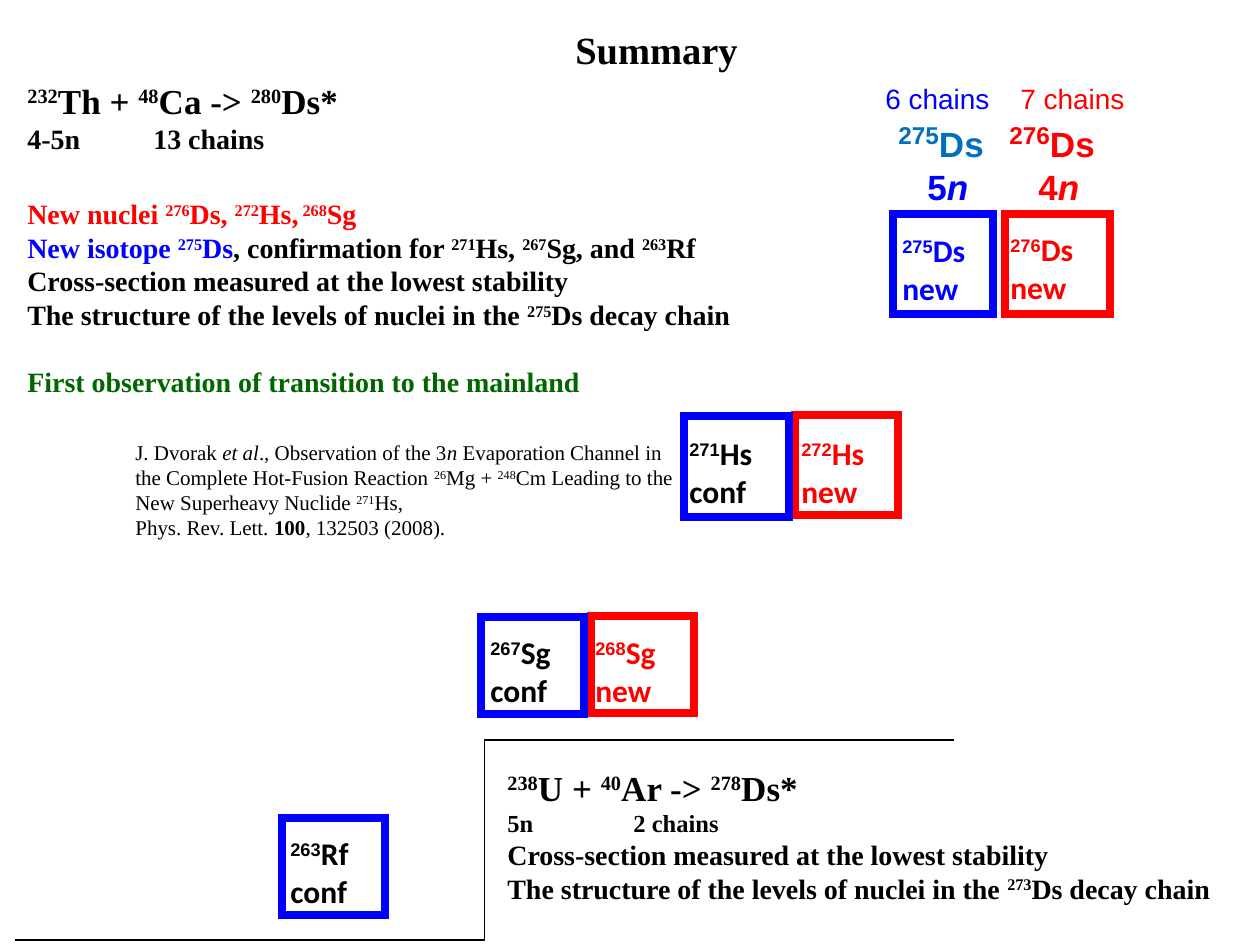
from lxml.etree import SubElement
from pptx import Presentation
from pptx.dml.color import RGBColor
from pptx.enum.shapes import MSO_CONNECTOR as Link, MSO_SHAPE as Shape
from pptx.enum.text import MSO_AUTO_SIZE as Fit
from pptx.oxml.ns import qn
from pptx.util import Pt

PX = 914400 / 126
RED, BLUE, SKY, GREEN, BLACK = "FF0000", "0000FF", "0070C0", "006600", "000000"
SERIF, SANS, CELL = "Times New Roman", "Arial", "Calibri"
TAB = 126

# Marks in text: ^ superscript, _ italic, ~ bold, | back to black
# Line: text, size, colour, space before in points
LEVELS = "The structure of the levels of nuclei in the "
CROSS = "Cross-section measured at the lowest stability"
THORIUM = [
    ("^232^Th + ^48^Ca -> ^280^Ds*", 20, BLACK, 0),
    ("4-5n\t13 chains", 16, BLACK, 0),
    ("New nuclei ^276^Ds, ^272^Hs,^ 268^Sg", 16, RED, 24),
    ("New isotope ^275^Ds|, confirmation for ^271^Hs, ^267^Sg, and ^263^Rf",
     16, BLUE, 0),
    (CROSS, 16, BLACK, 0),
    (LEVELS + "^275^Ds decay chain", 16, BLACK, 0),
    ("First observation of transition to the mainland", 16, GREEN, 19),
]
URANIUM = [
    ("^238^U + ^40^Ar -> ^278^Ds*", 20, BLACK, 0),
    ("5n\t2 chains", 14, BLACK, 0),
    (CROSS, 16, BLACK, 0),
    (LEVELS + "^273^Ds decay chain", 16, BLACK, 0),
]
PAPER = [
    ("J. Dvorak _et al_., Observation of the 3_n_ Evaporation Channel in the "
     "Complete Hot-Fusion Reaction ^26^Mg + ^248^Cm Leading to the "
     "New Superheavy Nuclide ^271^Hs,", 12, BLACK, 0),
    ("Phys. Rev. Lett. ~100~, 132503 (2008).", 12, BLACK, 0),
]

# Box, lines, font, bold, wrap
BLOCKS = [
    ((15, 73, 774, 331), THORIUM, SERIF, True, True),
    ((123, 433, 564, 113), PAPER, SERIF, False, True),
    ((873, 75, 130, 45), [("6 chains", 16, BLUE, 0)], SANS, False, False),
    ((1008, 75, 184, 45), [("7 chains", 16, RED, 0)], SANS, False, True),
    ((563, 20, 194, 58), [("Summary", 22, BLACK, 0)], SERIF, True, True),
    ((495, 760, 750, 151), URANIUM, SERIF, True, True),
]

# Column heads: box, mass, mass colour, neutrons, their colour, wrap
HEADS = [
    ((997, 109, 164, 105), "276", RED, "4", RED, True),
    ((886, 109, 111, 105), "275", SKY, "5", BLUE, False),
]

# Nuclides: frame, text corner, mass, element, state, frame and text colour
CELLS = [
    ((1005, 214, 105, 100), (998, 224), "276", "Ds", "new", RED, RED),
    ((795, 415, 103, 100), (789, 428), "272", "Hs", "new", RED, RED),
    ((591, 616, 103, 97), (583, 627), "268", "Sg", "new", RED, RED),
    ((893, 214, 100, 100), (890, 225), "275", "Ds", "new", BLUE, BLUE),
    ((684, 416, 105, 101), (677, 428), "271", "Hs", "conf", BLUE, BLACK),
    ((481, 617, 103, 97), (478, 627), "267", "Sg", "conf", BLUE, BLACK),
    ((282, 818, 103, 97), (278, 828), "263", "Rf", "conf", BLUE, BLACK),
]


def px(*vals):
    return [round(v * PX) for v in vals]


def rgb(code):
    return RGBColor.from_string(code)


def add_runs(para, text, bold, sup_font, sup_size):
    on = {"^": False, "_": False, "~": False, "|": False}

    def flush(part):
        if not part:
            return
        run = para.add_run()
        run.text = part
        if on["^"]:
            run._r.get_or_add_rPr().set("baseline", "30000")
            if sup_font:
                run.font.name = sup_font
            if sup_size:
                run.font.size = Pt(sup_size)
        if on["_"]:
            run.font.italic = True
        if on["~"]:
            run.font.bold = not bold
        if on["|"]:
            run.font.color.rgb = rgb(BLACK)

    part = ""
    for char in text:
        if char in on:
            flush(part)
            part = ""
            on[char] = not on[char]
        else:
            part += char
    flush(part)


def add_text(box, lines, font, bold, wrap, sup_font=None, sup_size=None):
    frame = slide.shapes.add_textbox(*px(*box)).text_frame
    frame.word_wrap = wrap
    frame.auto_size = Fit.SHAPE_TO_FIT_TEXT
    for i, (text, size, color, gap) in enumerate(lines):
        para = frame.paragraphs[0] if i == 0 else frame.add_paragraph()
        if gap:
            para.space_before = Pt(gap)
        if "\t" in text:
            tabs = SubElement(para._p.get_or_add_pPr(), qn("a:tabLst"))
            SubElement(tabs, qn("a:tab"), pos=str(px(TAB)[0]), algn="l")
        para.font.name, para.font.size = font, Pt(size)
        para.font.bold, para.font.color.rgb = bold, rgb(color)
        add_runs(para, text, bold, sup_font, sup_size)
    return frame


deck = Presentation()
deck.slide_width, deck.slide_height = px(1260, 945)
slide = deck.slides.add_slide(deck.slide_layouts[6])

# Nuclide frames with their labels, sharp corners
for box, (x, y), mass, name, state, edge, ink in CELLS:
    rect = slide.shapes.add_shape(Shape.RECTANGLE, *px(*box))
    rect.shadow.inherit = False
    rect.fill.background()
    rect.line.color.rgb, rect.line.width = rgb(edge), Pt(4.5)
    SubElement(rect.line._get_or_add_ln(), qn("a:miter"), lim="800000")
    lines = [(f"^{mass}^{name}", 18, ink, 0), (state, 18, ink, 0)]
    add_text((x, y, 100, 88), lines, CELL, True, False, SANS)

# Column heads, neutron count indented
for box, mass, tint, count, ink, wrap in HEADS:
    lines = [(f"^{mass}^Ds", 20, tint, 0), (f"{count}_n_", 20, ink, 0)]
    frame = add_text(box, lines, SANS, True, wrap, sup_size=24)
    frame.paragraphs[1]._p.get_or_add_pPr().set("marL", str(px(29)[0]))

# Text blocks
for block in BLOCKS:
    add_text(*block)

# Stepped divider
step = slide.shapes.add_connector(Link.ELBOW, *px(15, 940, 954, 740))
step.line.color.rgb, step.line.width = rgb(BLACK), Pt(1)
SubElement(step._element.spPr, qn("a:effectLst"))

deck.save("out.pptx")
